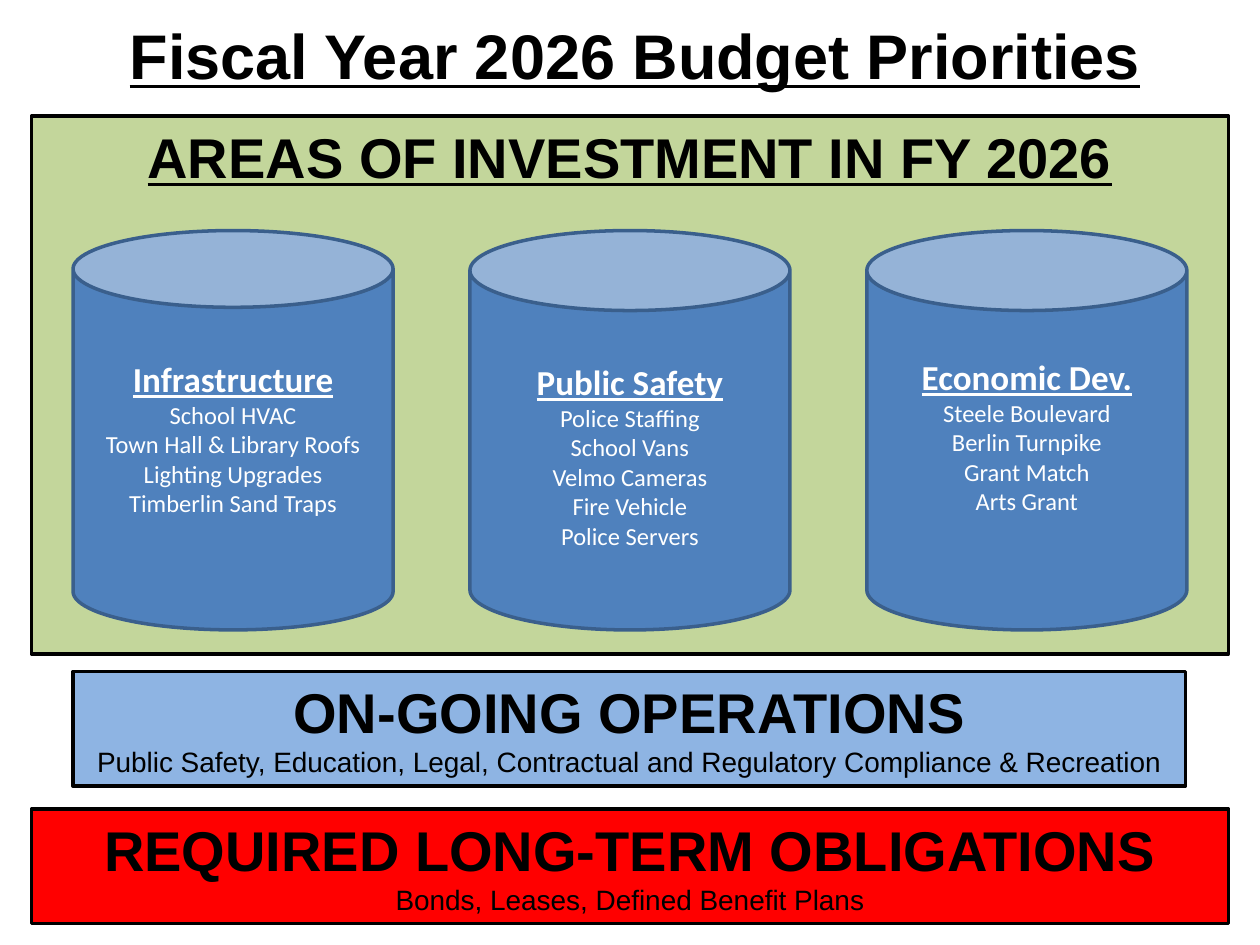
from dataclasses import dataclass

from pptx import Presentation
from pptx.dml.color import RGBColor
from pptx.enum.shapes import MSO_SHAPE
from pptx.enum.text import MSO_ANCHOR, MSO_AUTO_SIZE, PP_ALIGN
from pptx.util import Inches, Pt

RECTANGLE, CAN = MSO_SHAPE.RECTANGLE, MSO_SHAPE.CAN
TOP, CENTER = MSO_ANCHOR.TOP, PP_ALIGN.CENTER
NO_AUTOFIT = MSO_AUTO_SIZE.NONE

BLACK = RGBColor(0x00, 0x00, 0x00)
WHITE = RGBColor(0xFF, 0xFF, 0xFF)
RED = RGBColor(0xFF, 0x00, 0x00)
LIGHT_BLUE = RGBColor(0x8E, 0xB4, 0xE3)
GREEN = RGBColor(0xC3, 0xD6, 0x9B)
CAN_BLUE = RGBColor(0x4F, 0x81, 0xBD)
CAN_EDGE = RGBColor(0x3A, 0x5F, 0x8C)

CAN_LEFT, CAN_PITCH = 0.58, 3.15


@dataclass
class TextStyle:
    font: str
    size: int
    color: RGBColor
    bold: bool = False
    underline: bool = False


@dataclass
class Band:
    heading: str
    details: list[str]
    left: float
    top: float
    width: float
    height: float
    fill: RGBColor
    underline: bool = False


@dataclass
class Pillar:
    heading: str
    items: list[str]
    rim: float
    text_inset: float


BANDS = [
    Band("REQUIRED LONG-TERM OBLIGATIONS",
         ["Bonds, Leases, Defined Benefit Plans"],
         0.25, 6.42, 9.5, 0.91, RED),
    Band("ON-GOING OPERATIONS",
         ["Public Safety, Education, Legal, Contractual and Regulatory "
          "Compliance & Recreation"],
         0.58, 5.33, 8.83, 0.91, LIGHT_BLUE),
    Band("AREAS OF INVESTMENT IN FY 2026", [],
         0.25, 0.92, 9.5, 4.27, GREEN, underline=True),
]

PILLARS = [
    Pillar("Infrastructure",
           ["School HVAC", "Town Hall & Library Roofs",
            "Lighting Upgrades", "Timberlin Sand Traps"], 0.24, 0.4),
    Pillar("Public Safety",
           ["Police Staffing", "School Vans", "Velmo Cameras",
            "Fire Vehicle", "Police Servers"], 0.25, 0.4),
    Pillar("Economic Dev.",
           ["Steele Boulevard", "Berlin Turnpike", "Grant Match",
            "Arts Grant"], 0.25, 0.36),
]


def write_text(shape, heading: str, details: list[str],
               heading_style: TextStyle, detail_style: TextStyle) -> None:
    frame = shape.text_frame
    frame.text = "\n".join([heading, *details])
    frame.word_wrap = True
    frame.auto_size = NO_AUTOFIT
    frame.vertical_anchor = TOP
    for index, paragraph in enumerate(frame.paragraphs):
        style = detail_style if index else heading_style
        paragraph.alignment = CENTER
        for run in paragraph.runs:
            run.font.name = style.font
            run.font.size = Pt(style.size)
            run.font.bold = style.bold
            run.font.underline = style.underline
            run.font.color.rgb = style.color


def add_block(slide, preset, left: float, top: float, width: float,
              height: float, fill: RGBColor, edge: RGBColor):
    block = slide.shapes.add_shape(preset, Inches(left), Inches(top),
                                   Inches(width), Inches(height))
    block.shadow.inherit = False
    block.fill.solid()
    block.fill.fore_color.rgb = fill
    block.line.color.rgb = edge
    block.line.width = Pt(2)
    return block


def draw_band(slide, band: Band) -> None:
    block = add_block(slide, RECTANGLE, band.left, band.top, band.width,
                      band.height, band.fill, BLACK)
    write_text(block, band.heading, band.details,
               TextStyle("Arial", 32, BLACK, True, band.underline),
               TextStyle("Arial", 16, BLACK))


def draw_pillar(slide, pillar: Pillar, left: float) -> None:
    can = add_block(slide, CAN, left, 1.83, 2.54, 3.17, CAN_BLUE, CAN_EDGE)
    can.adjustments[0] = pillar.rim
    write_text(can, pillar.heading, pillar.items,
               TextStyle("Calibri", 20, WHITE, True, True),
               TextStyle("Calibri", 14, WHITE))
    can.text_frame.margin_top = Inches(pillar.text_inset)


def main() -> None:
    presentation = Presentation()
    presentation.slide_width = Inches(10)
    presentation.slide_height = Inches(7.5)
    slide = presentation.slides.add_slide(presentation.slide_layouts[5])

    # Title
    title = slide.shapes.title
    title.left, title.top = Inches(0.79), Inches(0.08)
    title.width, title.height = Inches(8.5), Inches(0.71)
    title_style = TextStyle("Arial", 36, BLACK, True, True)
    write_text(title, "Fiscal Year 2026 Budget Priorities", [],
               title_style, title_style)

    # Budget layers, then the investment pillars on the top layer
    for band in BANDS:
        draw_band(slide, band)
    for column, pillar in enumerate(PILLARS):
        draw_pillar(slide, pillar, CAN_LEFT + column * CAN_PITCH)

    presentation.save("out.pptx")


if __name__ == "__main__":
    main()
